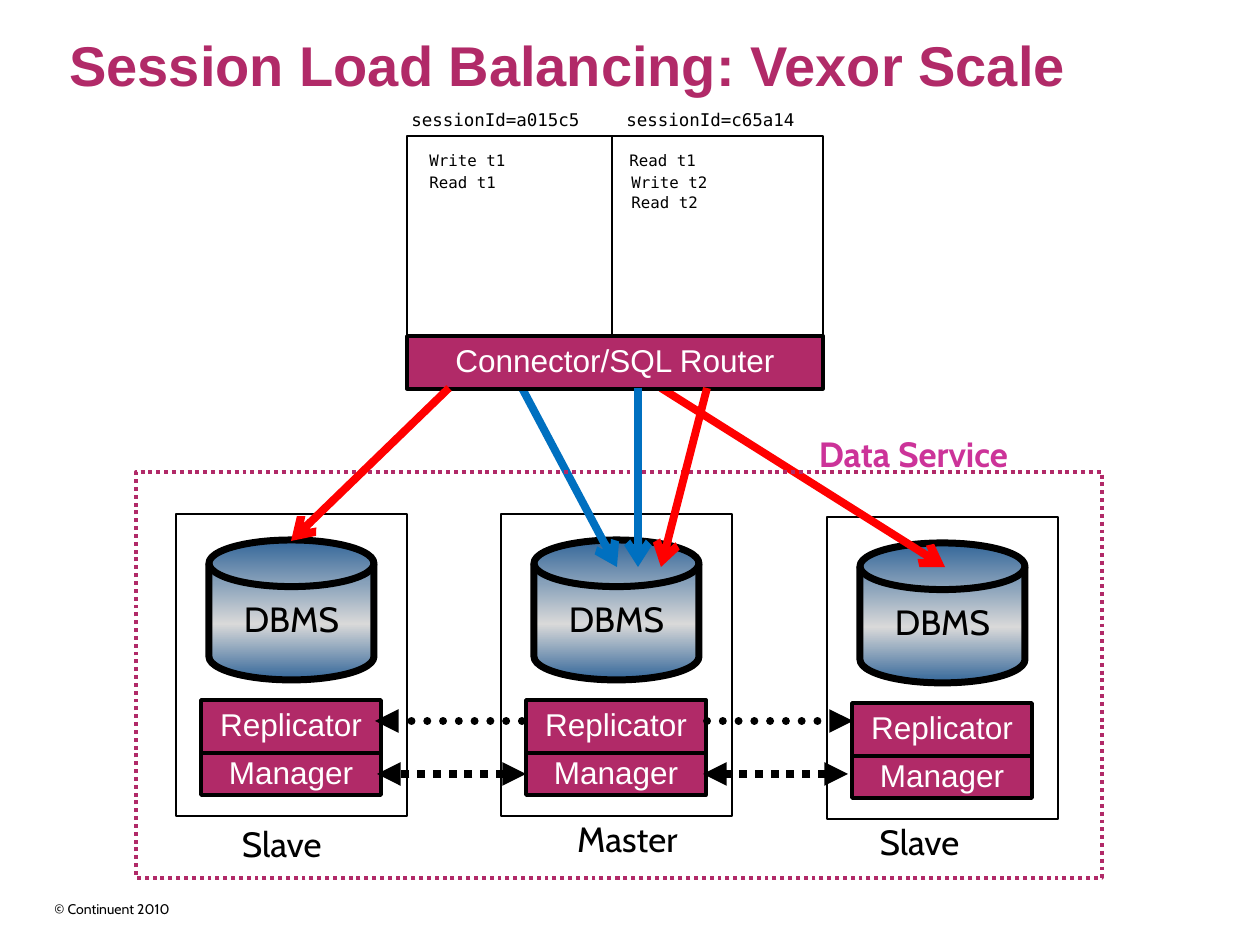
from copy import deepcopy
from dataclasses import dataclass

from lxml import etree
from pptx import Presentation
from pptx.dml.color import RGBColor
from pptx.enum import dml, shapes, text
from pptx.oxml import ns
from pptx.util import Pt

SCALE = 914400 / 126


@dataclass(frozen=True)
class Theme:
    plum: str = "B12A68"
    pink: str = "CC3399"
    red: str = "FF0000"
    blue: str = "0070C0"
    steel: str = "336699"
    silver: str = "D9D9D9"
    black: str = "000000"
    white: str = "FFFFFF"
    sans: str = "Arial"
    soft: str = "Cabin"
    mono: str = "DejaVu Sans Mono"
    title: int = 32
    label: int = 20
    bar: int = 18
    head: int = 10
    code: int = 9
    foot: int = 8


T = Theme()
LEFT, MID, RIGHT = text.PP_ALIGN.LEFT, text.PP_ALIGN.CENTER, text.PP_ALIGN.RIGHT
RECT = shapes.MSO_SHAPE.RECTANGLE
DISK = shapes.MSO_SHAPE.FLOWCHART_MAGNETIC_DISK


def px(*nums):
    return [round(n * SCALE) for n in nums]


def apply(obj, vals):
    for key, val in vals.items():
        setattr(obj, key, val)


def write(shape, words, size, font, color, align=LEFT, bold=False, **frame):
    tf = shape.text_frame
    apply(tf, {"word_wrap": True, **frame})
    para = tf.paragraphs[0]
    apply(para, {"alignment": align, "line_spacing": 0.9})
    run = para.add_run()
    run.text = words
    apply(run.font, {"name": font, "size": Pt(size), "bold": bold})
    run.font.color.rgb = RGBColor.from_string(color)


def label(slide, at, words, size, font, color=T.black, grow=True, **kw):
    box = slide.shapes.add_textbox(*px(*at))
    fit = text.MSO_AUTO_SIZE
    mode = fit.SHAPE_TO_FIT_TEXT if grow else fit.NONE
    write(box, words, size, font, color, auto_size=mode, **kw)


def stroke(line, color, width, dash=False):
    line.color.rgb = RGBColor.from_string(color)
    line.width = Pt(width)
    if dash:
        line.dash_style = dml.MSO_LINE.ROUND_DOT


def block(slide, at, fill=None, color=T.black, width=1, dash=False, kind=RECT):
    shape = slide.shapes.add_shape(kind, *px(*at))
    shape.shadow.inherit = False
    if fill:
        shape.fill.solid()
        shape.fill.fore_color.rgb = RGBColor.from_string(fill)
    else:
        shape.fill.background()
    stroke(shape.line, color, width, dash)
    return shape


def bar(slide, at, words):
    shape = block(slide, at, T.plum, width=2)
    write(shape, words, T.bar, T.sans, T.white, MID,
          vertical_anchor=text.MSO_ANCHOR.MIDDLE,
          margin_top=Pt(1.5), margin_bottom=Pt(1.5))
    return shape


def disk(slide, at):
    shape = block(slide, at, width=4, kind=DISK)
    shape.fill.gradient()
    shape.fill.gradient_angle = 270
    stops = shape.element.spPr.find(".//" + ns.qn("a:gsLst"))
    stops.append(deepcopy(stops[-1]))
    shades = [(0, T.steel), (0.6, T.silver), (1, T.steel)]
    for stop, (pos, color) in zip(shape.fill.gradient_stops, shades):
        stop.position = pos
        stop.color.rgb = RGBColor.from_string(color)
    write(shape, "DBMS", T.label, T.soft, T.black, MID,
          word_wrap=False, vertical_anchor=text.MSO_ANCHOR.MIDDLE)


def node(slide, x, y):
    block(slide, (x, y, 231, 302), T.white)
    disk(slide, (x + 33, y + 26, 165, 140))
    bar(slide, (x + 25, y + 186, 180, 53), "Replicator")
    return bar(slide, (x + 25, y + 239, 180, 42), "Manager")


def arrow(slide, ends, color, tail, head=None, dash=False, cap="flat"):
    kind = shapes.MSO_CONNECTOR.STRAIGHT
    link = slide.shapes.add_connector(kind, *px(*ends))
    stroke(link.line, color, 4.5, dash)
    prop = link.element.spPr
    ln = prop.find(ns.qn("a:ln"))
    ln.set("cap", cap)
    for tag, tip in (("a:headEnd", head), ("a:tailEnd", tail)):
        if tip:
            etree.SubElement(ln, ns.qn(tag)).set("type", tip)
    etree.SubElement(prop, ns.qn("a:effectLst"))
    return link


def links(slide, master):
    tip = "triangle"
    for ends in ((522, 721, 375, 721), (707, 721, 853, 721)):
        arrow(slide, ends, T.black, tip, dash=True, cap="rnd")
    pair = [arrow(slide, ends, T.black, tip, tip, True)
            for ends in ((526, 774, 377, 774), (848, 774, 703, 774))]
    pair[0].begin_connect(master, 1)


def routes(slide, paths):
    for color, ends in paths:
        arrow(slide, ends, color, "arrow")


def sessions(slide):
    columns = [
        (407, 205, 399, "sessionId=a015c5",
         [(417, 147, "Write t1"), (417, 169, "Read t1")]),
        (612, 211, 614, "sessionId=c65a14",
         [(617, 147, "Read t1"), (619, 169, "Write t2"), (619, 189, "Read t2")]),
    ]
    for x, wide, left, name, steps in columns:
        block(slide, (x, 136, wide, 199))
        label(slide, (left, 105, 205, 33), name, T.head, T.mono)
        for at, top, words in steps:
            label(slide, (at, top, 180, 30), words, T.code, T.mono)


def main():
    deck = Presentation()
    deck.slide_width, deck.slide_height = px(1260, 945)
    slide = deck.slides.add_slide(deck.slide_layouts[6])

    label(slide, (42, 896, 630, 28), "© Continuent 2010", T.foot, T.soft)
    label(slide, (57, 32, 1140, 94), "Session Load Balancing: Vexor Scale",
          T.title, T.sans, T.plum, grow=False, bold=True)

    node(slide, 176, 514)
    node(slide, 827, 517)
    master = node(slide, 501, 514)
    links(slide, master)
    for at, words, align in (
        ((558, 816, 132, 50), "Master", RIGHT),
        ((221, 821, 113, 50), "Slave", RIGHT),
        ((863, 819, 113, 50), "Slave", MID),
    ):
        label(slide, at, words, T.label, T.soft, align=align, word_wrap=False)

    routes(slide, [(T.blue, (522, 388, 617, 567)),
                   (T.red, (661, 388, 945, 567))])
    bar(slide, (407, 336, 416, 53), "Connector/SQL Router")
    block(slide, (136, 472, 966, 406), color=T.plum, width=2.25, dash=True)
    label(slide, (756, 431, 315, 53), "Data Service", T.label, T.soft, T.pink,
          align=MID, bold=True)
    sessions(slide)
    routes(slide, [(T.red, (449, 388, 291, 541)),
                   (T.blue, (638, 388, 638, 567)),
                   (T.red, (707, 388, 661, 567))])
    deck.save("out.pptx")


if __name__ == "__main__":
    main()
